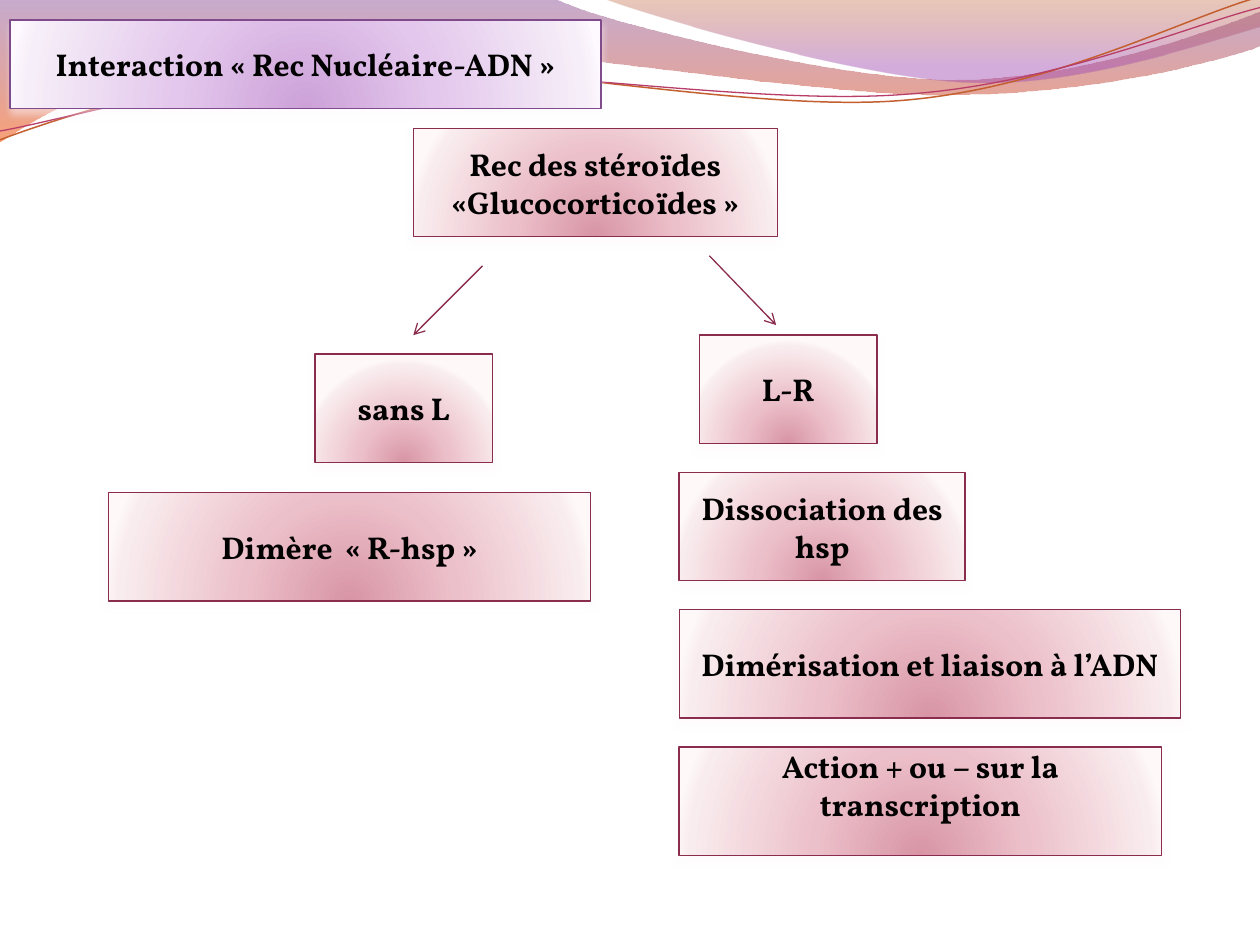
from lxml import etree
from pptx import Presentation
from pptx.dml.color import RGBColor
from pptx.enum.shapes import MSO_CONNECTOR, MSO_SHAPE
from pptx.enum.text import MSO_ANCHOR, PP_ALIGN
from pptx.oxml import parse_xml
from pptx.oxml.ns import nsdecls, qn
from pptx.util import Pt

RECT = MSO_SHAPE.RECTANGLE
LINE = MSO_CONNECTOR.STRAIGHT
TOP, MID = MSO_ANCHOR.TOP, MSO_ANCHOR.MIDDLE
MIDDLE = PP_ALIGN.CENTER
PX = 9144
ROW = 86

HEX = {
    "text": "000000",
    "plum": "804B8B", "plum pale": "FDF9FE",
    "rose": "892C4D", "rose pale": "FEF8F9",
    "rust": "C45F30", "pink": "B83D68",
}
GLOW = {
    "plum": [(0, "CDA2D9"), (43, "E3C7EC"), (93, "F6EEF8"), (100, "FDF9FE")],
    "rose": [(0, "D895A5"), (43, "ECC0CA"), (93, "F9ECEE"), (100, "FEF8F9")],
}
ROUND = ('<a:path path="circle"><a:fillToRect l="50000" t="130000" '
         'r="50000" b="-30000"/></a:path>')
DOWN = '<a:lin ang="5400000" scaled="0"/>'


class Deck:
    font = "Vollkorn"
    size = 18
    width = 0.75

    def __init__(self, wide, high):
        self.file = Presentation()
        self.file.slide_width, self.file.slide_height = wide * PX, high * PX
        self.slide = self.file.slides.add_slide(self.file.slide_layouts[6])
        self.shapes = self.slide.shapes

    def blend(self, shape, stops, style):
        marks = "".join(
            f'<a:gs pos="{pos * 1000}"><a:srgbClr val="{tint}">'
            f'<a:alpha val="{(alpha or [100])[0] * 1000}"/></a:srgbClr></a:gs>'
            for pos, tint, *alpha in stops)
        shape._element.spPr.append(parse_xml(
            f'<a:gradFill {nsdecls("a")} rotWithShape="1">'
            f'<a:gsLst>{marks}</a:gsLst>{style}</a:gradFill>'))

    def stroke(self, shape, tint, width=width):
        shape.line.color.rgb = RGBColor.from_string(HEX[tint])
        shape.line.width = Pt(width)

    def shade(self, shape, tint):
        shape.shadow.inherit = False
        shape._element.spPr.find(qn("a:effectLst")).append(parse_xml(
            f'<a:outerShdw {nsdecls("a")} blurRad="{Pt(4.5)}" dist="{Pt(3)}" '
            f'dir="5400000" rotWithShape="0"><a:srgbClr val="{HEX[tint]}">'
            f'<a:alpha val="48000"/></a:srgbClr></a:outerShdw>'))

    def curve(self, start, parts, close):
        pen = self.shapes.build_freeform(*start, scale=PX)
        pen.add_line_segments([part[-2:] for part in parts], close=close)
        shape = pen.convert_to_shape()
        left, top = round(shape.left / PX), round(shape.top / PX)
        legs = list(shape._element.iter(qn("a:lnTo")))
        for leg, part in zip(legs, parts):
            if len(part) == 6:
                bend = etree.Element(qn("a:cubicBezTo"))
                for x, y in zip(part[::2], part[1::2]):
                    etree.SubElement(bend, qn("a:pt"), x=str(x - left), y=str(y - top))
                leg.getparent().replace(leg, bend)
        return shape

    def wave(self, start, parts, stops):
        shape = self.curve(start, parts, True)
        self.blend(shape, stops, DOWN)
        shape.line.fill.background()
        shape.shadow.inherit = False

    def thread(self, start, parts, tint, width):
        shape = self.curve(start, parts, False)
        shape.fill.background()
        self.stroke(shape, tint, width)
        shape.shadow.inherit = False

    def box(self, text, x, y, wide, high=ROW, tint="rose", anchor=MID):
        shape = self.shapes.add_shape(RECT, x * PX, y * PX, wide * PX, high * PX)
        self.blend(shape, GLOW[tint], ROUND)
        self.stroke(shape, tint)
        self.shade(shape, tint + " pale")
        frame = shape.text_frame
        frame.word_wrap = True
        frame.vertical_anchor = anchor
        if anchor == TOP:
            frame.margin_top = 0
        frame.text = text
        para = frame.paragraphs[0]
        para.alignment = MIDDLE
        for run in para.runs:
            run.font.name, run.font.size, run.font.bold = self.font, Pt(self.size), True
            run.font.color.rgb = RGBColor.from_string(HEX["text"])

    def arrow(self, *ends):
        line = self.shapes.add_connector(LINE, *(n * PX for n in ends))
        self.stroke(line, "rose")
        props = line._element.spPr
        etree.SubElement(props.find(qn("a:ln")), qn("a:tailEnd"), type="arrow")
        etree.SubElement(props, qn("a:effectLst"))


def main():
    deck = Deck(1000, 750)
    deck.wave((0, 0), [
        (440, -1), (476, 17, 664, 63, 758, 63), (853, 63, 958, 26, 1000, 9),
        (1001, 36), (983, 44, 870, 76, 746, 75), (622, 75, 382, 28, 257, 34),
        (129, 36, 46, 83, -1, 113)], [(0, "834591", 45), (100, "F35307", 55)])
    deck.wave((479, -1), [
        (509, 11, 682, 62, 769, 65), (856, 69, 961, 32, 1000, 21), (1000, 0)],
        [(0, "B74915", 30), (80, "A14BB4", 45)])
    deck.thread((0, 111), [
        (48, 93, 158, 57, 277, 52), (395, 47, 593, 89, 713, 80),
        (833, 71, 938, 15, 998, -2)], "rust", 0.85)
    deck.thread((0, 104), [
        (47, 96, 164, 61, 283, 56), (403, 51, 597, 84, 717, 75),
        (836, 67, 941, 21, 1000, 6)], "pink", 0.75)

    deck.box("Interaction « Rec Nucléaire-ADN »", 8, 16, 469, 70, "plum")
    deck.box("Rec des stéroïdes «Glucocorticoïdes »", 328, 102, 289)
    deck.box("Dimère  « R-hsp »", 86, 391, 383)
    deck.arrow(383, 211, 328, 266)
    deck.arrow(563, 203, 616, 258)
    deck.box("sans L", 250, 281, 141)
    deck.box("L-R", 555, 266, 141)
    steps = [
        ("Dissociation des hsp", 227, MID),
        ("Dimérisation et liaison à l’ADN", 398, MID),
        ("Action + ou – sur la transcription", 383, TOP),
    ]
    for i, (text, wide, anchor) in enumerate(steps):
        deck.box(text, 539, 375 + 109 * i, wide, anchor=anchor)
    deck.file.save("out.pptx")


if __name__ == "__main__":
    main()
